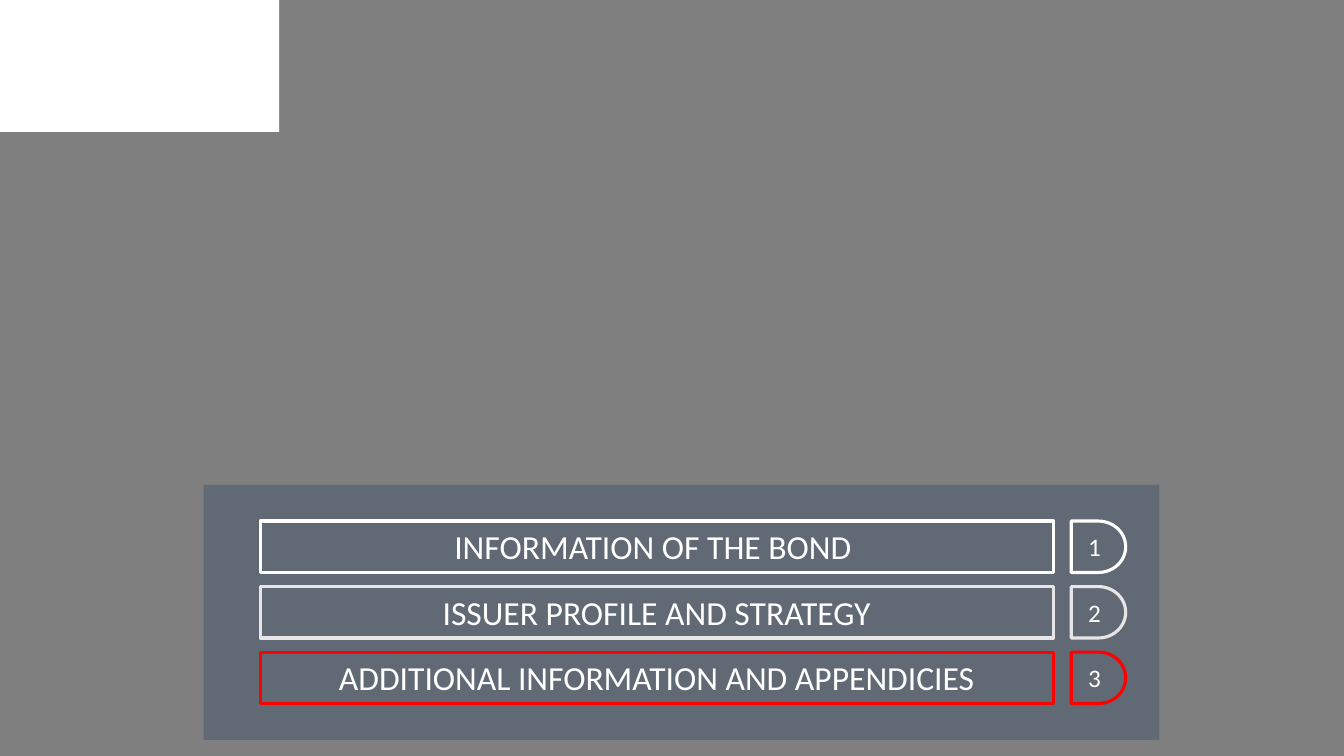
from lxml.etree import SubElement
from pptx import Presentation
from pptx.dml.color import RGBColor
from pptx.enum.shapes import MSO_SHAPE
from pptx.enum.text import MSO_ANCHOR, MSO_AUTO_SIZE, PP_ALIGN
from pptx.oxml.ns import qn
from pptx.util import Pt

BLACK = RGBColor(0x00, 0x00, 0x00)
WHITE = RGBColor(0xFF, 0xFF, 0xFF)
SLATE = RGBColor(0x44, 0x54, 0x6A)
LIGHT_GREY = RGBColor(0xE7, 0xE6, 0xE6)
RED = RGBColor(0xFF, 0x00, 0x00)

SLIDE_WIDTH, SLIDE_HEIGHT = 960, 540
ROW_TOP, ROW_PITCH, ROW_HEIGHT = 372.2, 46.8, 36.7
SECTIONS = [
    ("INFORMATION OF THE BOND ", WHITE),
    ("ISSUER PROFILE AND STRATEGY", LIGHT_GREY),
    ("ADDITIONAL INFORMATION AND APPENDICIES", RED),
]


class DividerSlide:
    font_name = "Calibri"
    outline_width = 2.25

    def __init__(self, slide):
        self.slide = slide

    def block(self, left, top, width, height, color, opacity=100):
        """Draw a filled rectangle without outline; opacity is in percent."""
        block = self.slide.shapes.add_shape(
            MSO_SHAPE.RECTANGLE, Pt(left), Pt(top), Pt(width), Pt(height))
        block.shadow.inherit = False
        block.line.fill.background()
        block.fill.solid()
        block.fill.fore_color.rgb = color
        if opacity < 100:
            rgb = block.fill._xPr.find(".//" + qn("a:srgbClr"))
            SubElement(rgb, qn("a:alpha"), val=str(opacity * 1000))

    def outlined(self, preset, left, top, width, text, size, color, anchor):
        """Draw an unfilled, outlined shape of row height with centred text."""
        outlined = self.slide.shapes.add_shape(
            preset, Pt(left), Pt(top), Pt(width), Pt(ROW_HEIGHT))
        outlined.shadow.inherit = False
        outlined.fill.background()
        outlined.line.color.rgb = color
        outlined.line.width = Pt(self.outline_width)
        frame = outlined.text_frame
        frame.word_wrap = True
        frame.vertical_anchor = anchor
        paragraph = frame.paragraphs[0]
        paragraph.alignment = PP_ALIGN.CENTER
        run = paragraph.add_run()
        run.text = text
        run.font.name = self.font_name
        run.font.size = Pt(size)
        run.font.color.rgb = WHITE
        return outlined

    def section(self, number, heading, color):
        top = ROW_TOP + (number - 1) * ROW_PITCH
        bar = self.outlined(MSO_SHAPE.RECTANGLE, 185.8, top, 566.6,
                            heading, 24, color, MSO_ANCHOR.TOP)
        bar.text_frame.auto_size = MSO_AUTO_SIZE.SHAPE_TO_FIT_TEXT
        self.outlined(MSO_SHAPE.FLOWCHART_DELAY, 765.2, top, 38.9,
                      str(number), 18, color, MSO_ANCHOR.MIDDLE)


def main():
    presentation = Presentation()
    presentation.slide_width = Pt(SLIDE_WIDTH)
    presentation.slide_height = Pt(SLIDE_HEIGHT)
    blank_layout = presentation.slide_layouts[6]
    divider = DividerSlide(presentation.slides.add_slide(blank_layout))

    divider.block(0, 0, SLIDE_WIDTH, SLIDE_HEIGHT, BLACK, opacity=50)
    divider.block(0, 0, 199.4, 94.3, WHITE)
    divider.block(145.5, 346.4, 682.6, 182.2, SLATE, opacity=50)
    for number, (heading, color) in enumerate(SECTIONS, start=1):
        divider.section(number, heading, color)

    presentation.save("out.pptx")


if __name__ == "__main__":
    main()
